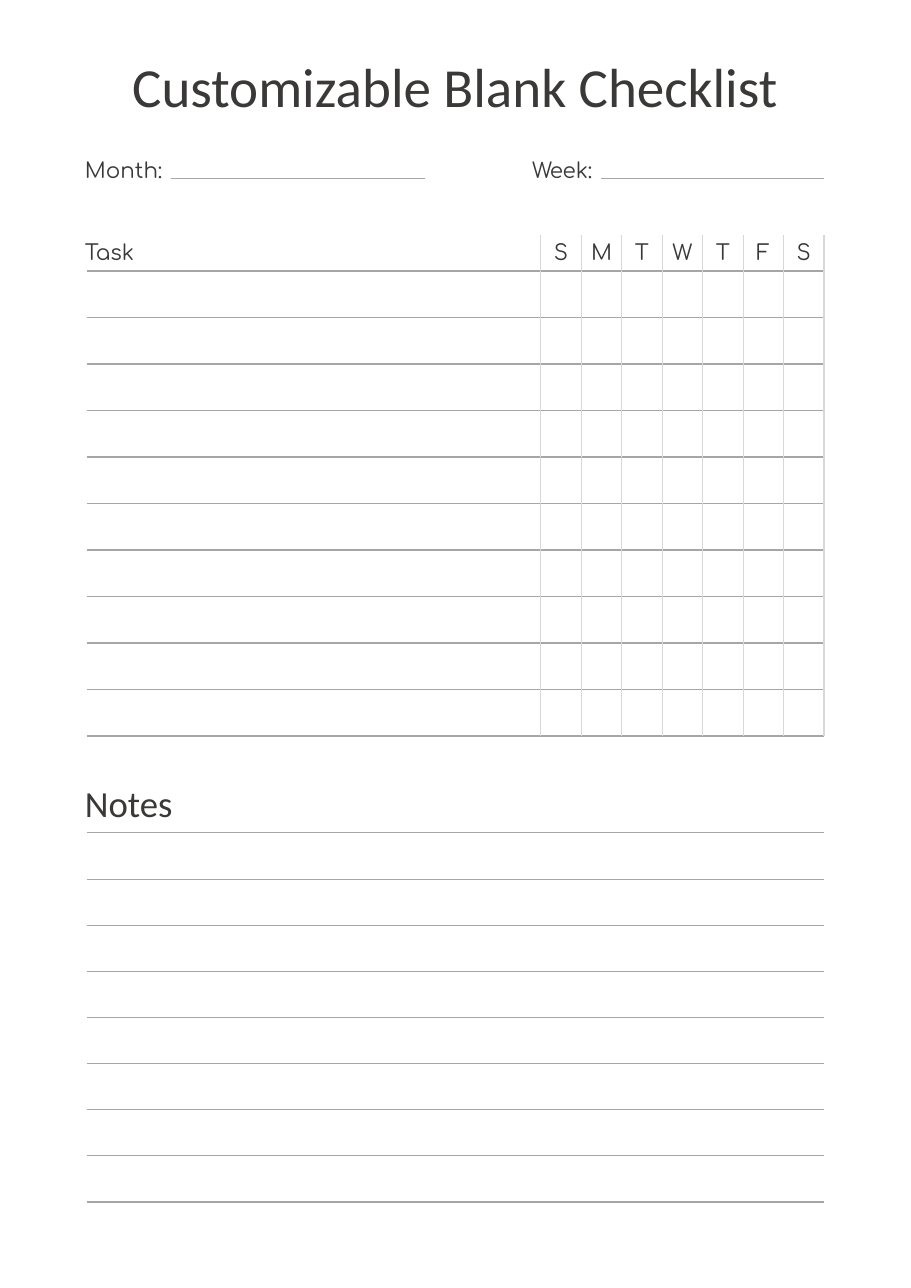
from dataclasses import dataclass
from lxml import etree
from pptx import Presentation
from pptx.dml import color
from pptx.enum import shapes, text
from pptx.oxml import ns
from pptx.util import Inches, Pt


@dataclass
class Theme:
    ink = color.RGBColor.from_string("3A3938")
    rule = color.RGBColor.from_string("A6A6A5")
    grid = color.RGBColor.from_string("D8D8D8")
    head = "Calibri"
    body = "Comfortaa"
    title = Pt(36)
    notes = Pt(24)
    label = Pt(14)
    line = Pt(0.75)


def write(box, words, left, top, width, height, size=Theme.label, font=Theme.body,
          align=text.PP_ALIGN.LEFT):
    box.left, box.top = Inches(left), Inches(top)
    box.width, box.height = Inches(width), Inches(height)
    frame = box.text_frame
    frame.text = words
    frame.word_wrap = True
    frame.auto_size = text.MSO_AUTO_SIZE.NONE
    frame.vertical_anchor = text.MSO_ANCHOR.TOP
    frame.margin_left = frame.margin_top = frame.margin_right = frame.margin_bottom = 0
    para = frame.paragraphs[0]
    para.alignment = align
    para.line_spacing = 1.0
    para.space_before = Pt(0)
    face = para.runs[0].font
    face.size, face.name = size, font
    face.color.rgb = Theme.ink


def rule(x1, y1, x2, y2, tint=Theme.rule):
    line = slide.shapes.add_connector(
        shapes.MSO_CONNECTOR.STRAIGHT, Inches(x1), Inches(y1), Inches(x2), Inches(y2))
    line.line.color.rgb = tint
    line.line.width = Theme.line
    etree.SubElement(line.element.spPr, ns.qn("a:effectLst"))


deck = Presentation()
deck.slide_width, deck.slide_height = Inches(8.27), Inches(11.69)
slide = deck.slides.add_slide(deck.slide_layouts[5])
center = text.PP_ALIGN.CENTER
left, right, edge = 0.79, 7.48, 0.77

write(slide.shapes.title, "Customizable Blank Checklist", 0.73, 0.48, 6.8, 0.61,
      Theme.title, Theme.head, center)

for words, start, width, begin, end in (
        ("Month:", edge, 0.78, 1.55, 3.86), ("Week:", 4.83, 0.64, 5.46, right)):
    write(slide.shapes.add_textbox(0, 0, 0, 0), words, start, 1.43, width, 0.24)
    rule(begin, 1.62, end, 1.62)

write(slide.shapes.add_textbox(0, 0, 0, 0), "Task", edge, 2.17, 4.01, 0.24)
first, last, tasks = 2.46, 6.68, 10
for row in range(tasks + 1):
    y = first + row * (last - first) / tasks
    rule(left, y, right, y)

days = "SMTWTFS"
start = 4.91
step = (right - start) / len(days)
for col in range(len(days) + 1):
    x = start + col * step
    rule(x, 2.13, x, last, Theme.grid)
for col, day in enumerate(days):
    write(slide.shapes.add_textbox(0, 0, 0, 0), day, start + col * step, 2.17, step, 0.24,
          align=center)

write(slide.shapes.add_textbox(0, 0, 0, 0), "Notes", edge, 7.09, 1.02, 0.4,
      Theme.notes, Theme.head)
first, last, gaps = 7.56, 10.91, 8
for row in range(gaps + 1):
    y = first + row * (last - first) / gaps
    rule(left, y, right, y)

deck.save("out.pptx")
